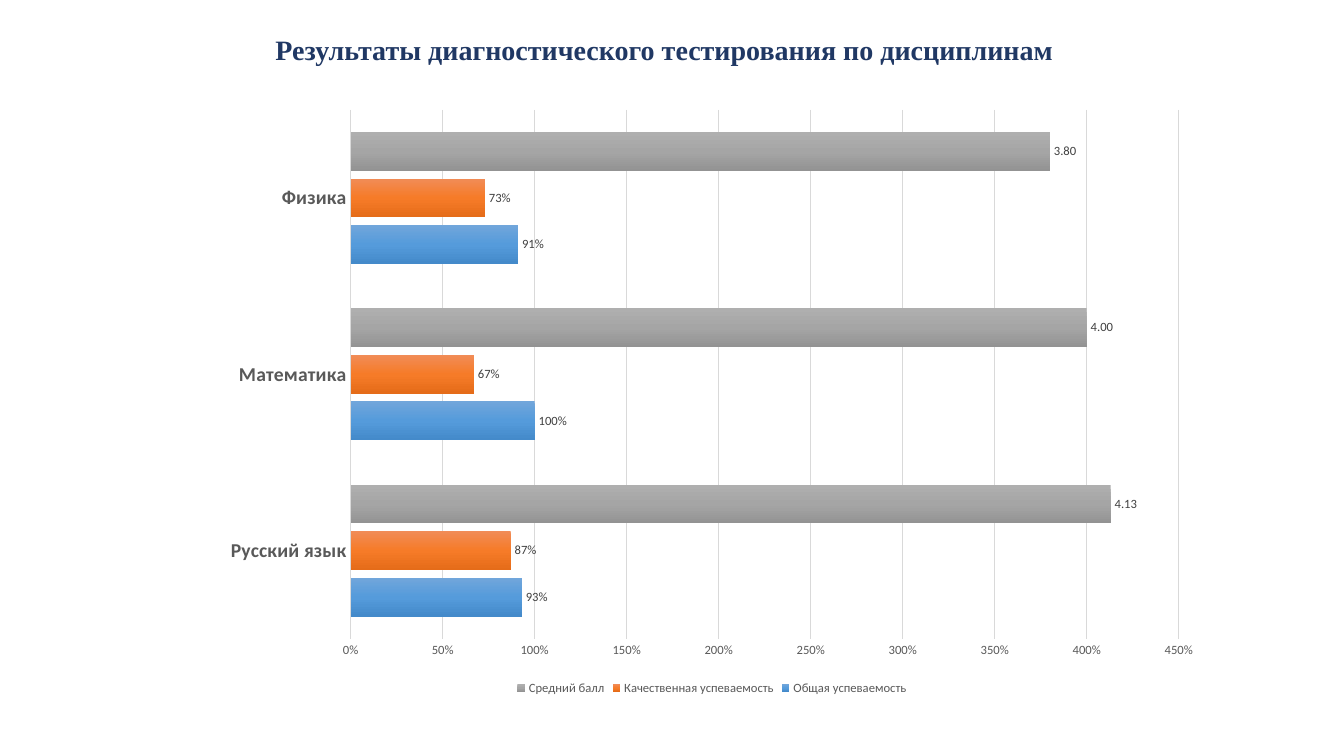
from copy import deepcopy
from dataclasses import dataclass

from pptx import Presentation
from pptx.chart.data import CategoryChartData
from pptx.dml.color import RGBColor
from pptx.enum.chart import XL_CHART_TYPE as ChartType
from pptx.enum.chart import XL_LABEL_POSITION as LabelPos
from pptx.enum.chart import XL_LEGEND_POSITION as LegendPos
from pptx.enum.chart import XL_TICK_MARK as TickMark
from pptx.enum.text import MSO_ANCHOR, PP_ALIGN
from pptx.oxml.ns import qn
from pptx.util import Inches, Pt

NAVY = RGBColor(0x20, 0x38, 0x64)
BLACK = RGBColor(0x00, 0x00, 0x00)
TEXT_GRAY = RGBColor(0x59, 0x59, 0x59)
LABEL_GRAY = RGBColor(0x40, 0x40, 0x40)
LINE_GRAY = RGBColor(0xD9, 0xD9, 0xD9)
BLUES = (RGBColor(0x71, 0xA6, 0xDB), RGBColor(0x55, 0x9B, 0xDB), RGBColor(0x44, 0x8A, 0xCA))
ORANGES = (RGBColor(0xF1, 0x8C, 0x57), RGBColor(0xF6, 0x7B, 0x28), RGBColor(0xE5, 0x6C, 0x19))
GRAYS = (RGBColor(0xAF, 0xAF, 0xAF), RGBColor(0xA5, 0xA5, 0xA5), RGBColor(0x93, 0x93, 0x93))


@dataclass(frozen=True)
class Measure:
    name: str
    values: tuple[float, ...]
    colors: tuple[RGBColor, ...]
    number_format: str


SUBJECTS = ("Русский язык", "Математика", "Физика")
MEASURES = (
    Measure("Общая успеваемость", (0.93, 1, 0.91), BLUES, "0%"),
    Measure("Качественная успеваемость", (0.87, 0.67, 0.73), ORANGES, "0%"),
    Measure("Средний балл", (4.13, 4, 3.8), GRAYS, "0.00"),
)


def set_font(font, size: float, color: RGBColor, name: str = "Calibri", bold: bool = False) -> None:
    font.name = name
    font.size = Pt(size)
    font.bold = bold
    font.color.rgb = color


def write_text(tf, text: str, align: PP_ALIGN = PP_ALIGN.CENTER, **fmt) -> None:
    p = tf.paragraphs[0]
    p.alignment = align
    p.line_spacing = 0.9
    r = p.add_run()
    r.text = text
    set_font(r.font, **fmt)


def set_line(line, color: RGBColor, width: float) -> None:
    line.color.rgb = color
    line.width = Pt(width)


def format_series(series, measure: Measure) -> None:
    """Apply a top-to-bottom gradient of three stops and the value labels."""
    fill = series.format.fill
    fill.gradient()
    fill.gradient_angle = 270
    stop_list = next(series._element.iter(qn("a:gsLst")))
    stop_list.append(deepcopy(stop_list[0]))
    for i, (stop, color) in enumerate(zip(fill.gradient_stops, measure.colors)):
        stop.position = i / 2
        stop.color.rgb = color
    series.format.line.fill.background()
    series.invert_if_negative = False

    labels = series.data_labels
    labels.show_value = True
    labels.position = LabelPos.OUTSIDE_END
    labels.number_format = measure.number_format
    labels.number_format_is_linked = False
    set_font(labels.font, 9, LABEL_GRAY)


def format_axes(chart) -> None:
    for axis in (chart.category_axis, chart.value_axis):
        axis.major_tick_mark = axis.minor_tick_mark = TickMark.NONE

    subjects = chart.category_axis
    subjects.has_major_gridlines = False
    set_font(subjects.tick_labels.font, 14, TEXT_GRAY, bold=True)
    set_line(subjects.format.line, LINE_GRAY, 1)

    scale = chart.value_axis
    scale.minimum_scale, scale.maximum_scale, scale.major_unit = 0, 4.5, 0.5
    scale.tick_labels.number_format = "0%"
    scale.tick_labels.number_format_is_linked = False
    set_font(scale.tick_labels.font, 9, TEXT_GRAY)
    scale.format.line.fill.background()
    set_line(scale.major_gridlines.format.line, LINE_GRAY, 0.75)


def add_results_chart(s) -> None:
    data = CategoryChartData()
    data.categories = SUBJECTS
    for measure in MEASURES:
        data.add_series(measure.name, measure.values, measure.number_format)
    chart = s.shapes.add_chart(
        ChartType.BAR_CLUSTERED, Inches(2.09), Inches(0.97), Inches(9.94), Inches(5.97), data
    ).chart
    chart.has_title = False
    set_font(chart.font, 10, BLACK)
    chart.has_legend = True
    chart.legend.position = LegendPos.BOTTOM
    chart.legend.include_in_layout = False
    set_font(chart.legend.font, 9, TEXT_GRAY)

    plot = chart.plots[0]
    plot.gap_width = 115
    plot.overlap = -20
    plot.vary_by_categories = False
    for series, measure in zip(plot.series, MEASURES):
        format_series(series, measure)
    format_axes(chart)


def add_title(s) -> None:
    sp = s.shapes.title
    sp.left, sp.top, sp.width, sp.height = Inches(0.84), Inches(0), Inches(11.5), Inches(0.75)
    tf = sp.text_frame
    tf.word_wrap = True
    tf.vertical_anchor = MSO_ANCHOR.MIDDLE
    tf.margin_top = Inches(0.32)
    write_text(tf, "Результаты диагностического тестирования по дисциплинам",
               size=20, color=NAVY, name="Times New Roman", bold=True)


def main() -> None:
    prs = Presentation()
    prs.slide_width, prs.slide_height = Inches(13.33), Inches(7.5)
    s = prs.slides.add_slide(prs.slide_layouts.get_by_name("Title Only"))
    add_title(s)
    add_results_chart(s)
    prs.save("out.pptx")


if __name__ == "__main__":
    main()
